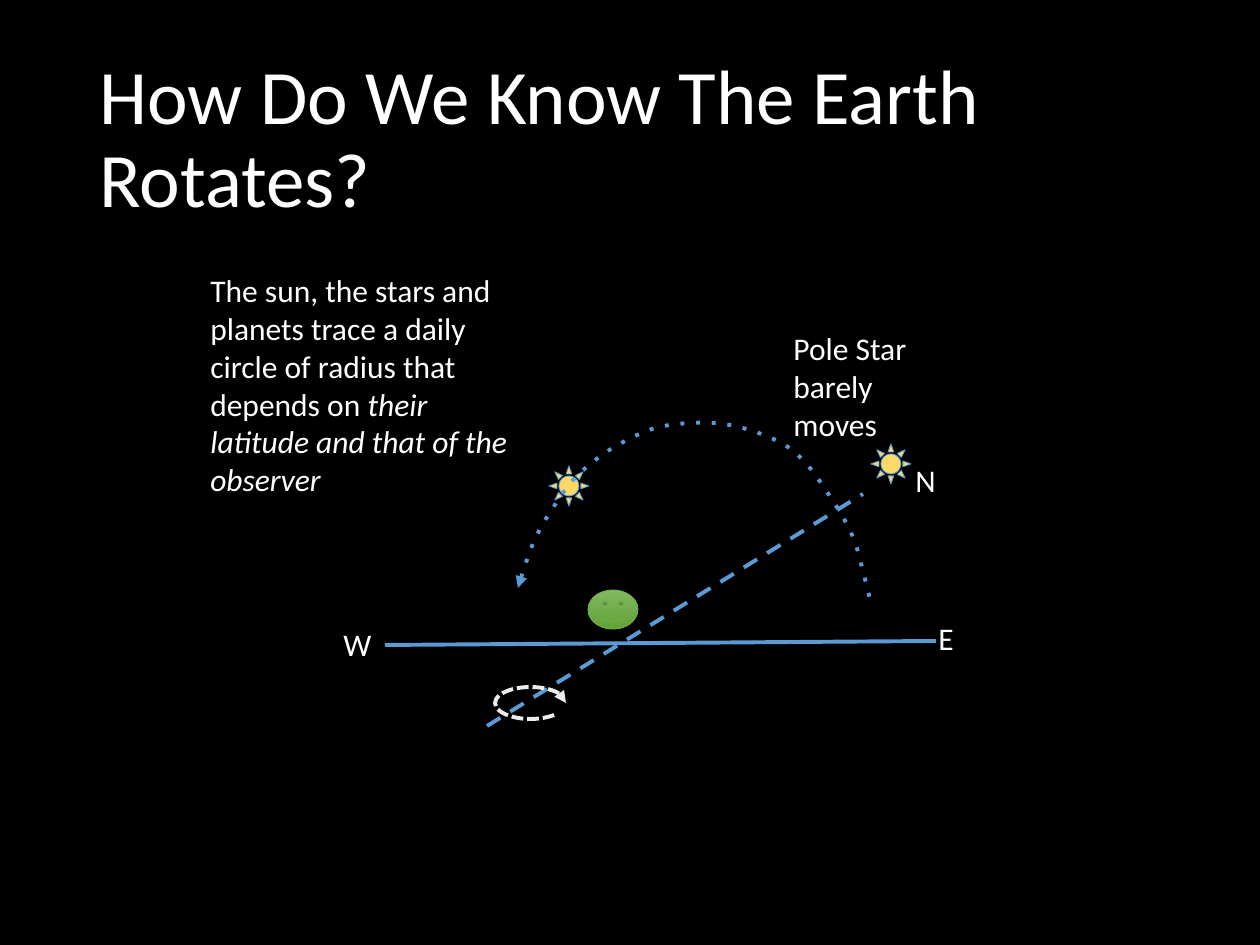
"""Builds the slide on how the Earth's rotation shows in the sky."""
from lxml.etree import SubElement
from pptx import Presentation
from pptx.dml.color import RGBColor
from pptx.enum.dml import MSO_LINE as Dash
from pptx.enum.shapes import MSO_CONNECTOR as Connector, MSO_SHAPE as Shape
from pptx.enum.text import MSO_ANCHOR as Anchor, MSO_AUTO_SIZE as AutoSize, PP_ALIGN as Align
from pptx.oxml.ns import qn
from pptx.util import Emu, Pt

BLACK = RGBColor(0x00, 0x00, 0x00)
WHITE = RGBColor(0xFF, 0xFF, 0xFF)
BLUE = RGBColor(0x5B, 0x9B, 0xD5)
YELLOW = RGBColor(0xFF, 0xD9, 0x66)
GREEN = RGBColor(0x70, 0xAD, 0x47)
LIGHT_GREEN = RGBColor(0x81, 0xB8, 0x61)
DARK_GREEN = RGBColor(0x62, 0xA3, 0x36)
PALE = RGBColor(0xED, 0xEC, 0xEC)
SCALE = 914400 / 126
FONT = "Calibri"

SUN_PATH = [
    (518, 588), (523, 571), (529, 554), (534, 541),
    (541, 527), (546, 518), (553, 508), (561, 496), (567, 486), (577, 476),
    (587, 466), (600, 456), (614, 447), (627, 440), (643, 431), (659, 427),
    (677, 423), (699, 422), (717, 423), (733, 425), (749, 429), (764, 435),
    (779, 441), (789, 446), (800, 457), (813, 469), (825, 489), (835, 504),
    (844, 518), (851, 530), (857, 548), (862, 566), (872, 607), (872, 607),
]


def px(*lengths):
    return [Emu(round(length * SCALE)) for length in lengths]


class SkySlide:
    def __init__(self, deck):
        self.page = deck.slides.add_slide(deck.slide_layouts[5])
        self.page.background.fill.solid()
        self.page.background.fill.fore_color.rgb = BLACK

    def add_spans(self, para, spans, size):
        for text, italic in spans:
            span = para.add_run()
            span.text = text
            span.font.name = FONT
            span.font.size = Pt(size)
            span.font.italic = italic
            span.font.color.rgb = WHITE

    def title(self, text, *place):
        box = self.page.shapes.title
        box.left, box.top, box.width, box.height = px(*place)
        frame = box.text_frame
        frame.auto_size = AutoSize.NONE
        frame.vertical_anchor = Anchor.MIDDLE
        para = frame.paragraphs[0]
        para.alignment = Align.LEFT
        para.line_spacing = 0.9
        self.add_spans(para, [(text, False)], 44)

    def text(self, spans, *place, wrap=False):
        frame = self.page.shapes.add_textbox(*px(*place)).text_frame
        frame.word_wrap = wrap
        frame.auto_size = AutoSize.SHAPE_TO_FIT_TEXT
        self.add_spans(frame.paragraphs[0], spans, 18)

    def stroke(self, shape, color, width, dash=None, arrow=None):
        shape.line.color.rgb = color
        shape.line.width = Pt(width)
        if dash:
            shape.line.dash_style = dash
        if arrow:
            outline = shape._element.spPr.find(qn("a:ln"))
            SubElement(outline, qn(f"a:{arrow}"), type="triangle")

    def line(self, *ends, dash=None):
        line = self.page.shapes.add_connector(Connector.STRAIGHT, *px(*ends))
        SubElement(line._element.spPr, qn("a:effectLst"))
        self.stroke(line, BLUE, 2.25, dash)

    def shape(self, kind, *place):
        shape = self.page.shapes.add_shape(kind, *px(*place))
        shape.shadow.inherit = False
        return shape

    def sun(self, left, top):
        sun = self.shape(Shape.SUN, left, top, 40, 40)
        sun.fill.solid()
        sun.fill.fore_color.rgb = YELLOW
        self.stroke(sun, BLUE, 0.5)

    def observer(self, *place):
        face = self.shape(Shape.SMILEY_FACE, *place)
        face.fill.gradient()
        face.fill.gradient_angle = 270
        for stop, color in zip(face.fill.gradient_stops, (LIGHT_GREEN, DARK_GREEN)):
            stop.color.rgb = color
        self.stroke(face, GREEN, 0.5)

    def spin(self, *place):
        arc = self.shape(Shape.ARC, *place)
        arc.adjustments[0] = 16.11
        arc.adjustments[1] = 0
        arc.fill.background()
        self.stroke(arc, PALE, 2.25, Dash.SQUARE_DOT, "tailEnd")

    def curve(self, points):
        builder = self.page.shapes.build_freeform(*points[0], scale=SCALE)
        builder.add_line_segments(points[1:], close=False)
        curve = builder.convert_to_shape()
        curve.shadow.inherit = False
        curve.fill.background()
        outline = curve._element.xpath(".//a:path")[0]
        steps = outline.findall(qn("a:lnTo"))
        for start in range(0, len(steps), 3):
            bezier = SubElement(outline, qn("a:cubicBezTo"))
            for step in steps[start:start + 3]:
                bezier.append(step[0])
                outline.remove(step)
        self.stroke(curve, BLUE, 2.25, Dash.ROUND_DOT, "headEnd")
        curve._element.xpath(".//a:prstDash")[0].set("val", "dot")


def main():
    deck = Presentation()
    deck.slide_width, deck.slide_height = px(1260, 945)
    sky = SkySlide(deck)
    sky.title("How Do We Know The Earth Rotates?", 87, 50, 1086, 183)
    sky.line(385, 645, 936, 641)
    sky.observer(588, 590, 50, 39)
    sky.text([("W", False)], 331, 619, 54, 50)
    sky.text([("E", False)], 926, 613, 45, 50)
    sky.line(487, 726, 863, 494, dash=Dash.DASH)
    sky.text([("N", False)], 903, 455, 49, 50)
    sky.sun(871, 444)
    sky.text([("Pole Star barely moves", False)], 781, 323, 171, 127, wrap=True)
    sky.sun(549, 466)
    sky.curve(SUN_PATH)
    sky.text([
        ("The sun, the stars and planets trace a daily circle of radius that depends on ", False),
        ("their latitude and that of the observer", True),
    ], 198, 265, 325, 242, wrap=True)
    sky.spin(495, 687, 71, 32)
    deck.save("out.pptx")


if __name__ == "__main__":
    main()
